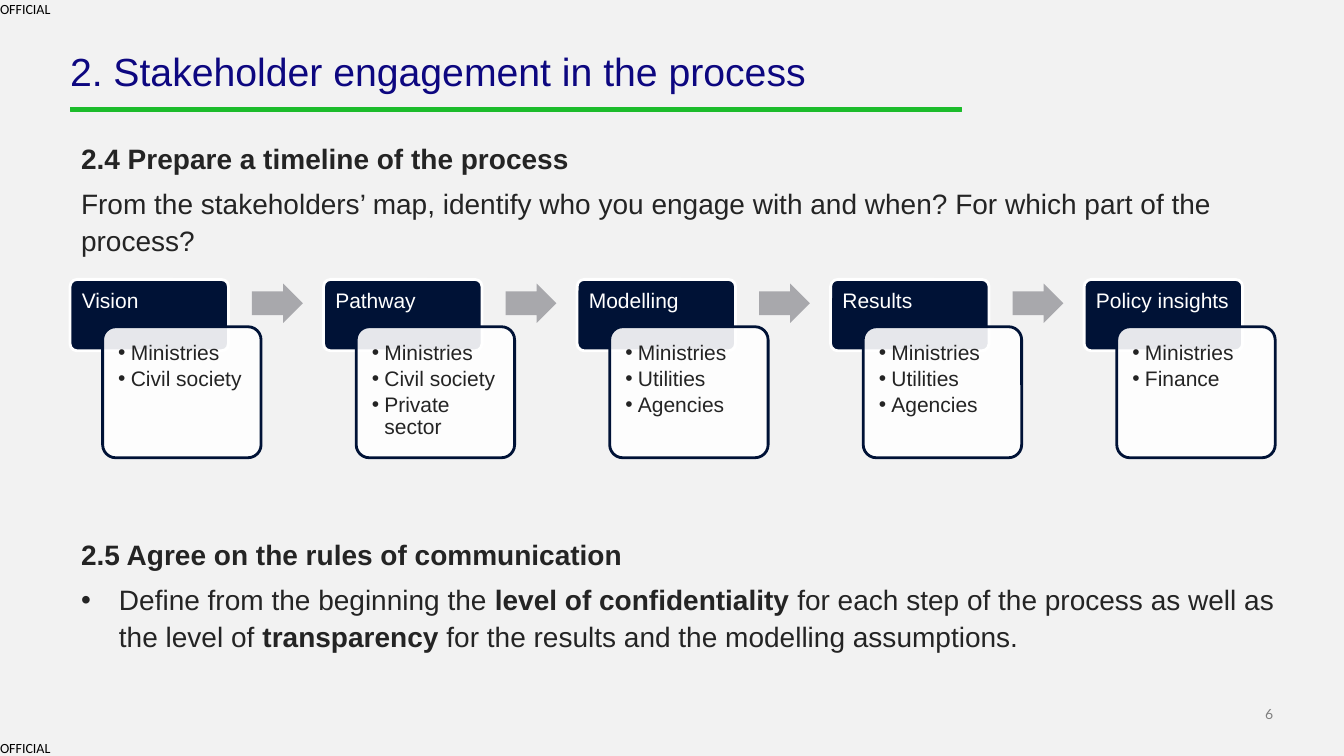
import pptx
import pptx.dml.color
import pptx.enum.shapes
import pptx.enum.text
import pptx.oxml.ns
import pptx.util
from lxml import etree

Pt = pptx.util.Pt
RGBColor = pptx.dml.color.RGBColor
Shapes = pptx.enum.shapes.MSO_SHAPE
Align = pptx.enum.text.PP_ALIGN
Anchor = pptx.enum.text.MSO_ANCHOR
qn = pptx.oxml.ns.qn

TITLE = "2. Stakeholder engagement in the process"
MARKING = "OFFICIAL"
PAGE_NUMBER = "6"
TIMELINE_HEADING = "2.4 Prepare a timeline of the process"
TIMELINE_QUESTION = (
    "From the stakeholders’ map, identify who you engage with and when? "
    "For which part of the process?"
)
STEPS = [
    ("Vision", ["Ministries", "Civil society"]),
    ("Pathway", ["Ministries", "Civil society", "Private sector"]),
    ("Modelling", ["Ministries", "Utilities", "Agencies"]),
    ("Results", ["Ministries", "Utilities", "Agencies"]),
    ("Policy insights", ["Ministries", "Finance"]),
]
RULES_HEADING = "2.5 Agree on the rules of communication"
RULES = [
    ("Define from the beginning the ", False),
    ("level of confidentiality ", True),
    ("for each step of the process as well as the level of ", False),
    ("transparency", True),
    (" for the results and the modelling assumptions.", False),
]

BACKGROUND = RGBColor(0xF2, 0xF2, 0xF2)
TITLE_BLUE = RGBColor(0x0D, 0x07, 0x80)
GREEN = RGBColor(0x1C, 0xBC, 0x2B)
NAVY = RGBColor(0x00, 0x12, 0x36)
WHITE = RGBColor(0xFF, 0xFF, 0xFF)
BLACK = RGBColor(0, 0, 0)
INK = RGBColor(0x24, 0x24, 0x24)
ARROW_GREY = RGBColor(0xA8, 0xA8, 0xAC)
NUMBER_GREY = RGBColor(0x7F, 0x7F, 0x7F)

LEFT = 50
STEP_TOP = 199.6
STEP_PITCH = 181.1
CARD_WIDTH = 113.2
CARD_SHIFT = 23.3
CARD_TOP = 233.4
CARD_INSET = 2.75
LABEL_MARGIN = 8.4


def add_shape(page, kind, left, top, width, height, fill, line=None, weight=2):
    shape = page.shapes.add_shape(kind, Pt(left), Pt(top), Pt(width), Pt(height))
    shape.shadow.inherit = False
    shape.fill.solid()
    shape.fill.fore_color.rgb = fill
    if line is None:
        shape.line.fill.background()
    else:
        shape.line.color.rgb = line
        shape.line.width = Pt(weight)
    return shape


def add_box(page, left, top, width, height, margin=0, wrap=True):
    box = page.shapes.add_textbox(Pt(left), Pt(top), Pt(width), Pt(height))
    frame = box.text_frame
    frame.word_wrap = wrap
    frame.margin_left = frame.margin_right = Pt(margin)
    frame.margin_top = frame.margin_bottom = Pt(margin)
    return frame


def add_para(frame, spans, size, color, font="Arial", spacing=1.0, before=0,
             after=0, indent=0, hanging=0):
    first = frame.paragraphs[0]
    para = frame.add_paragraph() if first.runs else first
    para.line_spacing = spacing
    para.space_before = Pt(before)
    para.space_after = Pt(after)
    properties = para._p.get_or_add_pPr()
    properties.set("marL", str(Pt(indent)))
    properties.set("indent", str(Pt(-hanging)))
    if hanging:
        bullet_color = etree.SubElement(properties, qn("a:buClr"))
        etree.SubElement(bullet_color, qn("a:srgbClr")).set("val", str(color))
        etree.SubElement(properties, qn("a:buFont")).set("typeface", "Arial")
        etree.SubElement(properties, qn("a:buChar")).set("char", "•")
    for text, bold in spans:
        span = para.add_run()
        span.text = text
        span.font.name = font
        span.font.size = Pt(size)
        span.font.bold = bold
        span.font.color.rgb = color
    return para


def add_step(page, left, label, members):
    header = add_shape(page, Shapes.ROUNDED_RECTANGLE, left, STEP_TOP,
                       CARD_WIDTH, 51, NAVY, WHITE)
    header.adjustments[0] = 0.1
    frame = add_box(page, left, STEP_TOP, CARD_WIDTH, 34, LABEL_MARGIN)
    add_para(frame, [(label, False)], 15, WHITE, spacing=0.9)

    card_left = left + CARD_SHIFT
    card = add_shape(page, Shapes.ROUNDED_RECTANGLE, card_left, CARD_TOP,
                     CARD_WIDTH, 93.6, WHITE, NAVY)
    card.adjustments[0] = 0.1
    fill_color = card._element.spPr.find(qn("a:solidFill")).find(qn("a:srgbClr"))
    etree.SubElement(fill_color, qn("a:alpha")).set("val", "90000")
    frame = add_box(page, card_left + CARD_INSET, CARD_TOP + CARD_INSET,
                    CARD_WIDTH - 2 * CARD_INSET, 88, LABEL_MARGIN)
    for index, member in enumerate(members):
        add_para(frame, [(member, False)], 15, INK, spacing=0.9,
                 before=2.2 if index else 0, indent=9, hanging=9)


def add_arrow(page, left):
    arrow = add_shape(page, Shapes.RIGHT_ARROW, left, 202.6, 36.3, 28.1, ARROW_GREY)
    arrow.adjustments[0] = 0.6
    arrow.adjustments[1] = 0.5


def main():
    deck = pptx.Presentation()
    deck.slide_width, deck.slide_height = Pt(960), Pt(540)
    page = deck.slides.add_slide(deck.slide_layouts[6])
    page.background.fill.solid()
    page.background.fill.fore_color.rgb = BACKGROUND

    frame = add_box(page, 879, 504, 30.5, 12)
    frame.vertical_anchor = Anchor.BOTTOM
    number = add_para(frame, [(PAGE_NUMBER, False)], 10, NUMBER_GREY, "Lato")
    number.alignment = Align.RIGHT
    for top in (528, 0):
        frame = add_box(page, 0, top, 38, 12, wrap=False)
        add_para(frame, [(MARKING, False)], 10, BLACK, "Calibri")

    add_shape(page, Shapes.RECTANGLE, 50.4, 76.8, 636.6, 2.9, GREEN, GREEN, 0.75)
    frame = add_box(page, LEFT, 37.4, 638, 30.2)
    add_para(frame, [(TITLE, False)], 28, TITLE_BLUE, spacing=0.9)

    frame = add_box(page, LEFT, 98.6, 861, 107)
    add_para(frame, [(TIMELINE_HEADING, True)], 20, INK, spacing=1.1, before=3, indent=7.9)
    add_para(frame, [(TIMELINE_QUESTION, False)], 20, INK, spacing=1.1,
             before=6, after=3, indent=7.9)

    for index, (label, members) in enumerate(STEPS):
        left = LEFT + index * STEP_PITCH
        add_step(page, left, label, members)
        if index < len(STEPS) - 1:
            add_arrow(page, left + 130)

    frame = add_box(page, LEFT, 381.6, 861, 158.4)
    add_para(frame, [(RULES_HEADING, True)], 20, INK, spacing=1.1, before=3, indent=7.9)
    add_para(frame, RULES, 20, INK, spacing=1.1, before=6, after=3, indent=35, hanging=27)

    deck.save("out.pptx")


if __name__ == "__main__":
    main()
